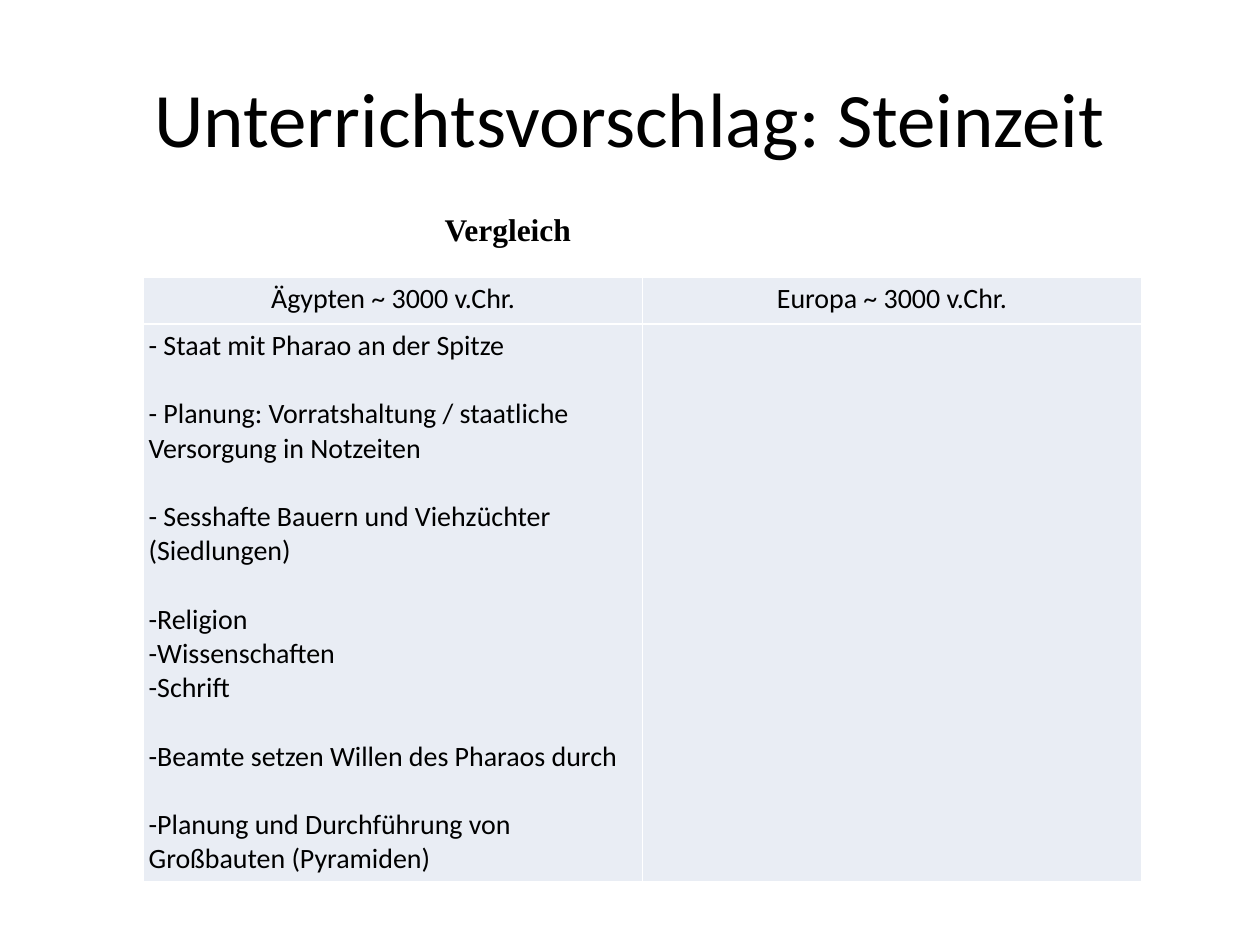
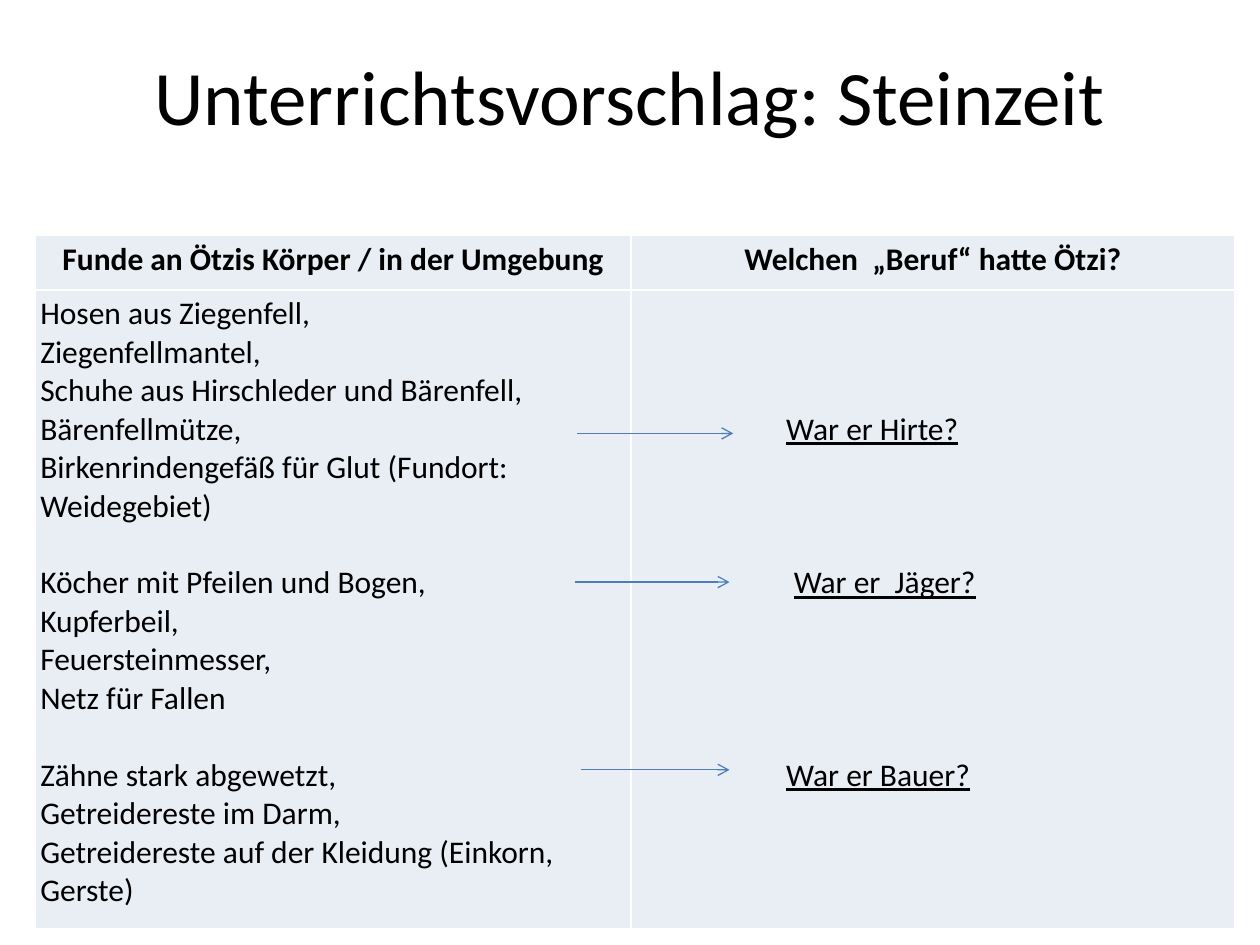
"""Builds two lesson slides on the Stone Age: a comparison and the finds around Ötzi."""
from lxml.etree import SubElement
from pptx import Presentation
from pptx.dml.color import RGBColor
from pptx.enum.shapes import MSO_CONNECTOR as Connector
from pptx.enum.text import MSO_ANCHOR as Anchor, PP_ALIGN as Align
from pptx.oxml.ns import qn
from pptx.util import Inches, Pt

COLOURS = {"text": "000000", "cell": "E9EDF4", "border": "FFFFFF", "arrow": "4B7EBC"}
BODY_FONT = "Calibri"
CAPTION_FONT = "Times New Roman"
LINE_HEIGHT = 1.22
CELL_INSET = 0.04
TITLE = "Unterrichtsvorschlag: Steinzeit"

EGYPT = [
    ["- Staat mit Pharao an der Spitze"],
    ["- Planung: Vorratshaltung / staatliche Versorgung in Notzeiten"],
    ["- Sesshafte Bauern und Viehzüchter (Siedlungen)"],
    ["-Religion", "-Wissenschaften", "-Schrift"],
    ["-Beamte setzen Willen des Pharaos durch"],
    ["-Planung und Durchführung von Großbauten (Pyramiden)"],
]
FINDS = [
    ["Hosen aus Ziegenfell,", "Ziegenfellmantel,",
     "Schuhe aus Hirschleder und Bärenfell, Bärenfellmütze,",
     "Birkenrindengefäß für Glut (Fundort: Weidegebiet)"],
    ["Köcher mit Pfeilen und Bogen,", "Kupferbeil,", "Feuersteinmesser,", "Netz für Fallen"],
    ["Zähne stark abgewetzt,", "Getreidereste im Darm,",
     "Getreidereste auf der Kleidung (Einkorn, Gerste)"],
]
JOBS = [("War er Hirte?", 0, 1.19), ("War er  Jäger?", 3, 1.25), ("War er Bauer?", 4, 1.19)]
JOB_ARROWS = [(4.58, 5.82, 3.44), (4.56, 5.79, 4.62), (4.61, 5.79, 6.11)]


def spaced(groups):
    """Turn groups of lines into (text, blank lines before, indent) entries."""
    return [(line, int(g > 0 and n == 0), 0)
            for g, group in enumerate(groups) for n, line in enumerate(group)]


class Deck:
    """Holds the shared style and the slide being built."""

    def __init__(self):
        """Start an empty 10 by 7.5 inch presentation."""
        self.presentation = Presentation()
        self.presentation.slide_width = Inches(10)
        self.presentation.slide_height = Inches(7.5)
        self.slide = None

    def colour(self, name):
        """Look up a named colour."""
        return RGBColor.from_string(COLOURS[name])

    def style(self, paragraph, size, font=BODY_FONT, bold=False, align=Align.LEFT):
        """Format a whole paragraph."""
        paragraph.alignment = align
        paragraph.font.name = font
        paragraph.font.size = Pt(size)
        paragraph.font.bold = bold
        paragraph.font.color.rgb = self.colour("text")

    def add_slide(self, title_top):
        """Add a slide with the shared title."""
        self.slide = self.presentation.slides.add_slide(self.presentation.slide_layouts[5])
        title = self.slide.shapes.title
        title.left, title.top = Inches(0.5), Inches(title_top)
        title.width, title.height = Inches(9), Inches(1.25)
        title.text_frame.text = TITLE
        title.text_frame.vertical_anchor = Anchor.MIDDLE
        self.style(title.text_frame.paragraphs[0], 44, align=Align.CENTER)

    def add_caption(self, text, left, top, width, height):
        """Add a bold serif caption."""
        caption = self.slide.shapes.add_textbox(
            Inches(left), Inches(top), Inches(width), Inches(height)).text_frame
        caption.word_wrap = True
        caption.margin_top = Inches(0.28)
        caption.text = text
        self.style(caption.paragraphs[0], 18, CAPTION_FONT, bold=True)

    def add_grid(self, left, top, widths, heights):
        """Add a plain table with filled cells and thin borders."""
        grid = self.slide.shapes.add_table(
            len(heights), len(widths), Inches(left), Inches(top),
            Inches(sum(widths)), Inches(sum(heights))).table
        grid.first_row = grid.horz_banding = False
        for column, width in zip(grid.columns, widths):
            column.width = Inches(width)
        for row, height in zip(grid.rows, heights):
            row.height = Inches(height)
        for cell in grid.iter_cells():
            cell.margin_left = cell.margin_right = Inches(CELL_INSET)
            cell.margin_top = cell.margin_bottom = Inches(CELL_INSET)
            self.add_borders(cell)
            cell.fill.solid()
            cell.fill.fore_color.rgb = self.colour("cell")
        return grid

    def add_borders(self, cell):
        """Draw the four borders of a cell."""
        properties = cell._tc.get_or_add_tcPr()
        for side in ("lnL", "lnR", "lnT", "lnB"):
            border = SubElement(properties, qn(f"a:{side}"), w=str(Pt(1)))
            fill = SubElement(border, qn("a:solidFill"))
            SubElement(fill, qn("a:srgbClr"), val=COLOURS["border"])

    def fill_header(self, grid, headings, size, bold=False):
        """Write the centred column headings."""
        for cell, heading in zip(grid.rows[0].cells, headings):
            cell.text = heading
            self.style(cell.text_frame.paragraphs[0], size, bold=bold, align=Align.CENTER)

    def fill_cell(self, cell, entries, size, underline=False):
        """Write entries of text, blank lines before and indent."""
        cell.text = "\n".join(text for text, _, _ in entries)
        for paragraph, (_, blank_lines, indent) in zip(cell.text_frame.paragraphs, entries):
            self.style(paragraph, size)
            paragraph.font.underline = underline
            paragraph.space_before = Pt(blank_lines * size * LINE_HEIGHT)
            paragraph._p.get_or_add_pPr().set("marL", str(Inches(indent)))

    def add_arrow(self, start, end, y):
        """Draw a thin horizontal arrow."""
        arrow = self.slide.shapes.add_connector(
            Connector.STRAIGHT, Inches(start), Inches(y), Inches(end), Inches(y))
        arrow.line.color.rgb = self.colour("arrow")
        arrow.line.width = Pt(0.75)
        SubElement(arrow.line._get_or_add_ln(), qn("a:tailEnd"), type="arrow")
        SubElement(arrow._element.spPr, qn("a:effectLst"))


def build_comparison(deck):
    """Compare Egypt and Europe."""
    deck.add_slide(0.3)
    comparison = deck.add_grid(1.14, 2.2, [3.96, 3.96], [0.37, 4.43])
    deck.fill_header(comparison, ["Ägypten ~ 3000 v.Chr.", "Europa ~ 3000 v.Chr."], 16)
    deck.fill_cell(comparison.cell(1, 0), spaced(EGYPT), 16)
    deck.add_caption("Vergleich", 3.43, 1.39, 3.03, 0.91)


def build_finds(deck):
    """Lead from the finds to Ötzi's possible jobs."""
    deck.add_slide(0.13)
    finds = deck.add_grid(0.28, 1.87, [4.73, 4.79], [0.43, 5.07])
    deck.fill_header(
        finds, ["Funde an Ötzis Körper / in der Umgebung", "Welchen  „Beruf“ hatte Ötzi?"],
        18, bold=True)
    deck.fill_cell(finds.cell(1, 0), spaced(FINDS), 18)
    jobs = finds.cell(1, 1)
    deck.fill_cell(jobs, JOBS, 18, underline=True)
    jobs.margin_top = Inches(CELL_INSET) + Pt(3 * 18 * LINE_HEIGHT)
    for start, end, y in JOB_ARROWS:
        deck.add_arrow(start, end, y)


def main():
    """Build and save both slides."""
    deck = Deck()
    build_comparison(deck)
    build_finds(deck)
    deck.presentation.save("out.pptx")


if __name__ == "__main__":
    main()
